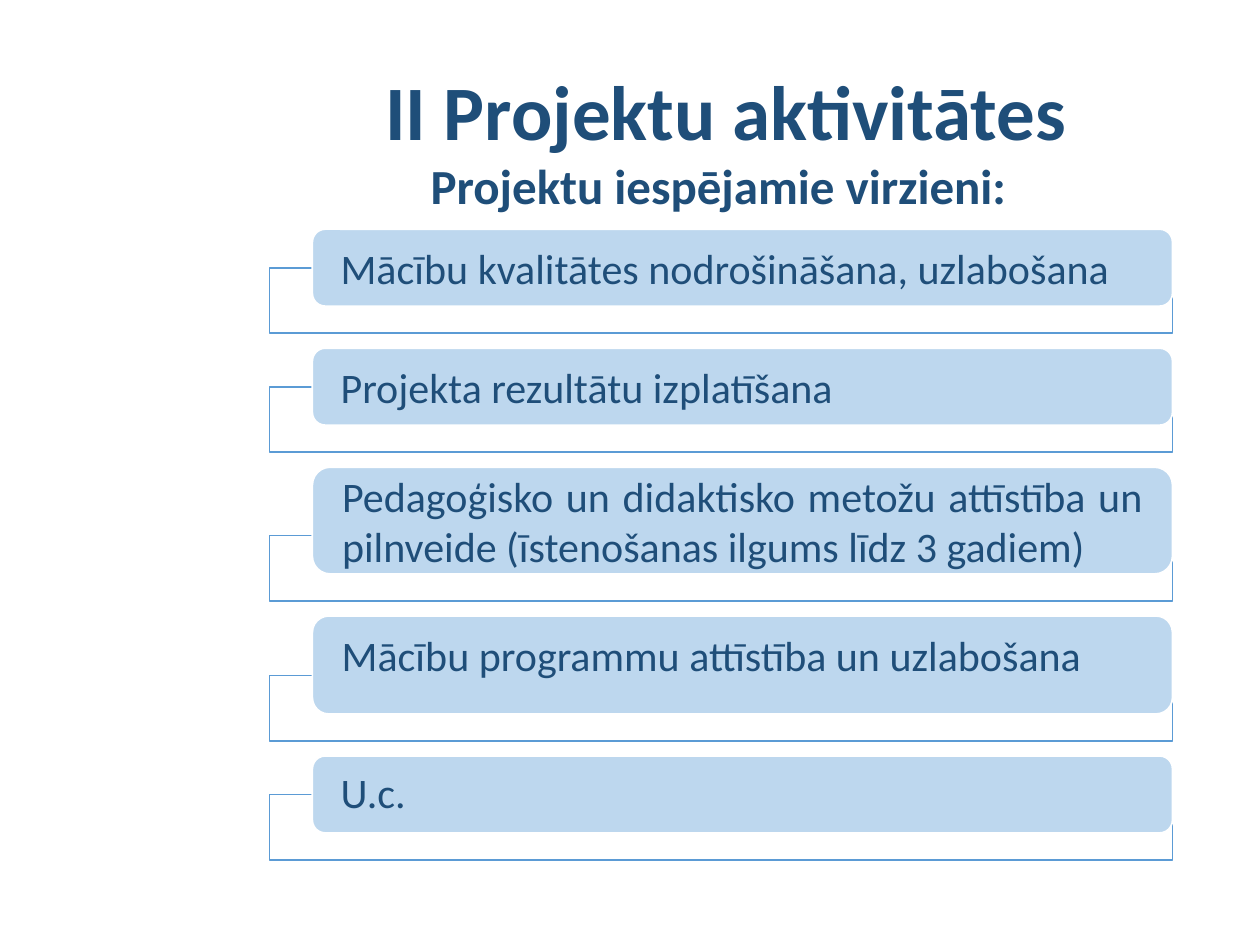
from lxml import etree
from pptx import Presentation
from pptx.dml.color import RGBColor
from pptx.enum.shapes import MSO_SHAPE
from pptx.enum.text import MSO_ANCHOR, PP_ALIGN
from pptx.oxml.ns import qn
from pptx.util import Pt

LEFT, CENTER, JUSTIFY = PP_ALIGN.LEFT, PP_ALIGN.CENTER, PP_ALIGN.JUSTIFY
MIDDLE = MSO_ANCHOR.MIDDLE
RECTANGLE, ROUNDED = MSO_SHAPE.RECTANGLE, MSO_SHAPE.ROUNDED_RECTANGLE

NAVY = RGBColor(0x1F, 0x4E, 0x79)
BLUE = RGBColor(0x5B, 0x9B, 0xD5)
PALE_BLUE = RGBColor(0xBD, 0xD7, 0xEE)
WHITE = RGBColor(0xFF, 0xFF, 0xFF)

TITLE_BOX = (160, 29, 510, 74)
SUBTITLE_BOX = (239, 81.5, 480, 43)
LIST_BOX = (154, 131, 516, 361)

BAR_INDENT = 24.5
FRAME_HEIGHT = 37.5
FRAME_OVERLAP = 22
ROW_GAP = 24

# Text, bar height, and formatting that differs from the other rows
DIRECTIONS = [
    ("Mācību kvalitātes nodrošināšana, uzlabošana", 44, {}),
    ("Projekta rezultātu izplatīšana", 44, {}),
    ("Pedagoģisko un didaktisko metožu attīstība un pilnveide "
     "(īstenošanas ilgums līdz 3 gadiem)", 61, {}),
    ("Mācību programmu attīstība un uzlabošana", 56, {"bottom": 12}),
    ("U.c.", 44, {"align": LEFT, "spacing": 0.9}),
]


def write_text(shape, text, size=24, bold=False, align=JUSTIFY, spacing=1.0,
               anchor=MIDDLE, side=7.2, top=0, bottom=0):
    frame = shape.text_frame
    frame.word_wrap = True
    frame.vertical_anchor = anchor
    frame.margin_left = frame.margin_right = Pt(side)
    frame.margin_top, frame.margin_bottom = Pt(top), Pt(bottom)
    paragraph = frame.paragraphs[0]
    paragraph.alignment = align
    paragraph.line_spacing = spacing
    run = paragraph.add_run()
    run.text = text
    run.font.name = "Calibri"
    run.font.size = Pt(size)
    run.font.bold = bold
    run.font.color.rgb = NAVY


def add_panel(slide, kind, box, fill, line):
    panel = slide.shapes.add_shape(kind, *map(Pt, box))
    panel.shadow.inherit = False
    panel.fill.solid()
    panel.fill.fore_color.rgb = fill
    panel.line.color.rgb = line
    panel.line.width = Pt(1)
    return panel


def set_opacity(panel, percent):
    color = panel._element.spPr.find(qn("a:solidFill")).find(qn("a:srgbClr"))
    etree.SubElement(color, qn("a:alpha")).set("val", str(percent * 1000))


def add_heading(slide, title_box, subtitle_box):
    title = slide.shapes.title
    title.left, title.top, title.width, title.height = map(Pt, title_box)
    write_text(title, "II Projektu aktivitātes", size=44, bold=True,
               align=CENTER, spacing=0.9, top=3.6, bottom=3.6)

    subtitle = slide.shapes.add_textbox(*map(Pt, subtitle_box))
    write_text(subtitle, "Projektu iespējamie virzieni:", size=28, bold=True,
               spacing=1.12, anchor=MSO_ANCHOR.TOP, top=3.6, bottom=3.6)


def add_directions(slide, box):
    left, bar_top, width, _ = box
    for text, bar_height, text_format in DIRECTIONS:
        # Outlined frame behind the lower part of the bar
        frame_top = bar_top + bar_height - FRAME_OVERLAP
        frame = add_panel(slide, RECTANGLE,
                          (left, frame_top, width, FRAME_HEIGHT), WHITE, BLUE)
        set_opacity(frame, 90)

        # Rounded bar with the direction
        bar = add_panel(slide, ROUNDED,
                        (left + BAR_INDENT, bar_top, width - BAR_INDENT, bar_height),
                        PALE_BLUE, WHITE)
        write_text(bar, text, side=14, **text_format)
        bar_top += bar_height + ROW_GAP


def main():
    prs = Presentation()
    prs.slide_width, prs.slide_height = Pt(720), Pt(540)
    slide = prs.slides.add_slide(prs.slide_layouts[5])
    add_heading(slide, TITLE_BOX, SUBTITLE_BOX)
    add_directions(slide, LIST_BOX)
    prs.save("out.pptx")


if __name__ == "__main__":
    main()
